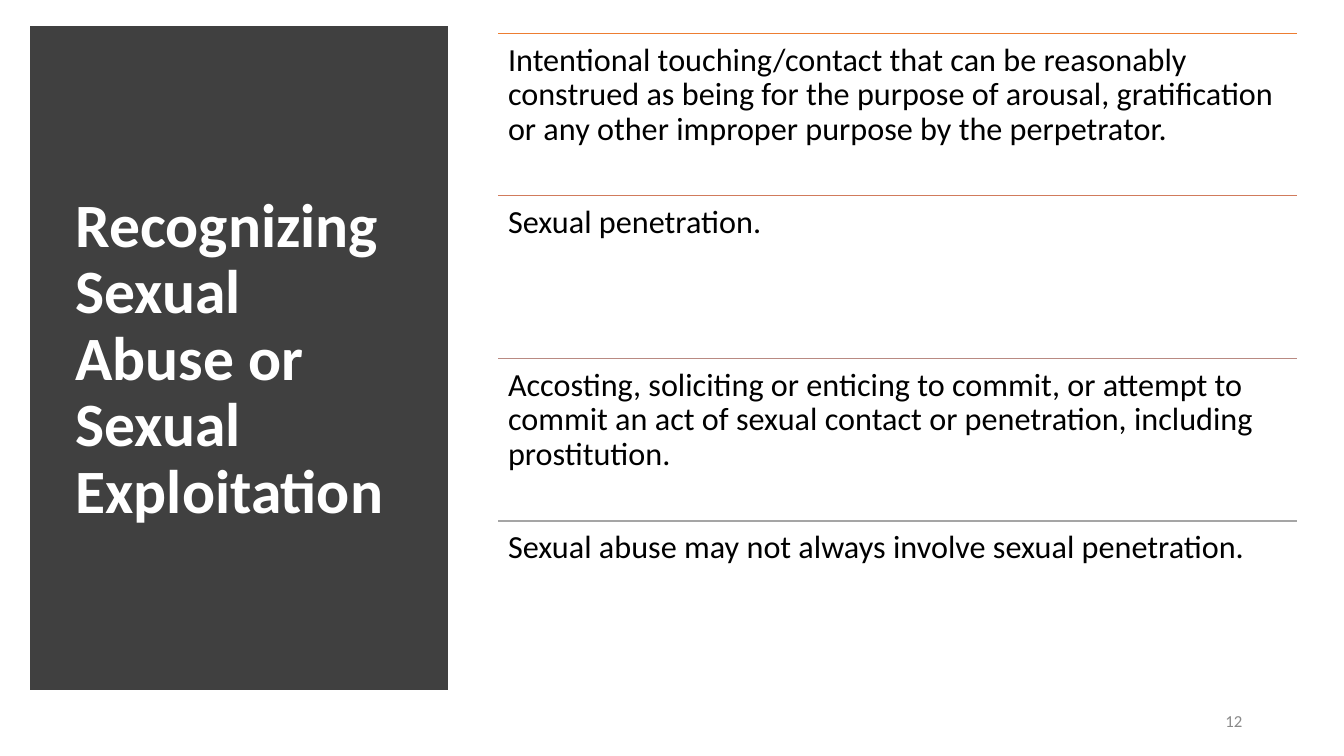
from lxml import etree
from pptx import Presentation
from pptx.dml.color import RGBColor
from pptx.enum import shapes, text
from pptx.oxml.ns import qn
from pptx.util import Inches, Pt

TITLE = "Recognizing Sexual Abuse or Sexual Exploitation"
PAGE = "12"
POINTS = [
    ("Intentional touching/contact that can be reasonably construed as being for the purpose of "
     "arousal, gratification or any other improper purpose by the perpetrator.", "rule1"),
    ("Sexual penetration.", "rule2"),
    ("Accosting, soliciting or enticing to commit, or attempt to commit an act of sexual contact "
     "or penetration, including prostitution.", "rule3"),
    ("Sexual abuse may not always involve sexual penetration.", "rule4"),
]
COLORS = {"panel": "404040", "white": "FFFFFF", "black": "000000", "page": "898989",
          "rule1": "ED7D31", "rule2": "D17B5C", "rule3": "B98A82", "rule4": "A5A5A5"}
FONT = "Calibri"
TOP, HEIGHT = 0.33, 6.45
LIST_LEFT, LIST_WIDTH = 4.94, 7.92
ROW = HEIGHT / len(POINTS)


def color(name):
    return RGBColor.from_string(COLORS[name])


def write(sp, words, size, ink, anchor, align=text.PP_ALIGN.LEFT, spacing=0.9, bold=False):
    tf = sp.text_frame
    tf.text = words
    tf.word_wrap = True
    tf.auto_size = text.MSO_AUTO_SIZE.NONE
    tf.vertical_anchor = anchor
    p = tf.paragraphs[0]
    p.alignment, p.line_spacing = align, spacing
    font = p.runs[0].font
    font.name, font.size, font.bold = FONT, Pt(size), bold
    font.color.rgb = color(ink)
    return tf


prs = Presentation()
prs.slide_width, prs.slide_height = Inches(13.33), Inches(7.5)
s = prs.slides.add_slide(prs.slide_layouts[5])

# Dark panel with square corners
panel = s.shapes.add_shape(shapes.MSO_SHAPE.RECTANGLE, Inches(0.37), Inches(TOP),
                           Inches(4), Inches(HEIGHT))
panel.shadow.inherit = False
panel.fill.solid()
panel.fill.fore_color.rgb = color("panel")
panel.line.color.rgb = color("panel")
panel.line.width = Pt(10)
etree.SubElement(panel.line._get_or_add_ln(), qn("a:miter"), lim="800000")

# Title, in front of the panel
title = s.shapes.title
title.left, title.top, title.width, title.height = map(Inches, (0.65, 0.7, 3.46, 5.75))
write(title, TITLE, 44, "white", text.MSO_ANCHOR.MIDDLE, bold=True)
panel._element.addnext(title._element)

# Page number
page = s.shapes.add_textbox(Inches(9.42), Inches(6.95), Inches(3), Inches(0.4))
write(page, PAGE, 12, "page", text.MSO_ANCHOR.MIDDLE, text.PP_ALIGN.RIGHT, spacing=1)
page.text_frame.paragraphs[0].space_after = Pt(6)

# Ruled list of points
for i, (words, rule_color) in enumerate(POINTS):
    y = Inches(TOP + i * ROW)
    rule = s.shapes.add_connector(shapes.MSO_CONNECTOR.STRAIGHT, Inches(LIST_LEFT), y,
                                  Inches(LIST_LEFT + LIST_WIDTH), y)
    rule.line.color.rgb = color(rule_color)
    rule.line.width = Pt(1)
    etree.SubElement(rule._element.spPr, qn("a:effectLst"))

    box = s.shapes.add_textbox(Inches(LIST_LEFT), y, Inches(LIST_WIDTH), Inches(ROW))
    tf = write(box, words, 23, "black", text.MSO_ANCHOR.TOP)
    tf.margin_left = tf.margin_right = tf.margin_top = tf.margin_bottom = Inches(0.1)

prs.save("out.pptx")
